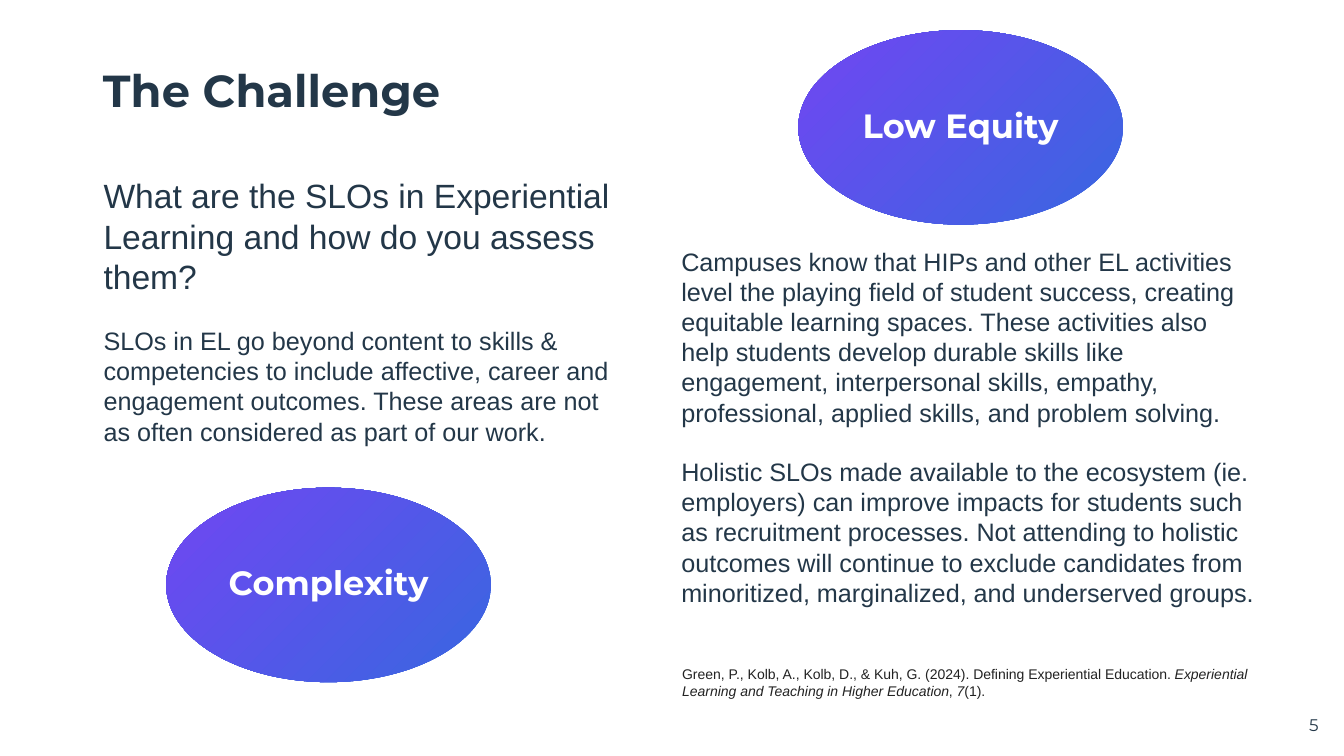
import pptx
import pptx.dml.color
import pptx.enum.shapes
import pptx.enum.text
import pptx.util

Cm, Pt = pptx.util.Cm, pptx.util.Pt
ALIGN = pptx.enum.text.PP_ALIGN
ANCHOR = pptx.enum.text.MSO_ANCHOR


def rgb(value):
    return pptx.dml.color.RGBColor.from_string(value)


class Deck:
    heading, body = "Montserrat", "Arial"
    ink, citation_ink, white = "233748", "222222", "FFFFFF"
    blue, purple = "3867E0", "7146F2"

    def __init__(self):
        self.prs = pptx.Presentation()
        self.prs.slide_width, self.prs.slide_height = Cm(33.87), Cm(19.05)
        self.s = self.prs.slides.add_slide(self.prs.slide_layouts[5])

    def font(self, p, name, size, color, bold=False):
        p.font.name, p.font.size, p.font.bold = name, Pt(size), bold
        p.font.color.rgb = rgb(color)

    def title(self, text, left, top, width, height):
        sp = self.s.shapes.title
        sp.left, sp.top, sp.width, sp.height = Cm(left), Cm(top), Cm(width), Cm(height)
        tf = sp.text_frame
        tf.text = text
        tf.auto_size = pptx.enum.text.MSO_AUTO_SIZE.NONE
        tf.vertical_anchor = ANCHOR.BOTTOM
        p = tf.paragraphs[0]
        p.alignment, p.line_spacing = ALIGN.LEFT, 0.9
        self.font(p, self.heading, 32, self.ink, True)

    def box(self, left, top, width, height):
        sp = self.s.shapes.add_textbox(Cm(left), Cm(top), Cm(width), Cm(height))
        sp.text_frame.word_wrap = True
        return sp.text_frame

    def passage(self, paragraphs, *place):
        tf = self.box(*place)
        for i, (text, size) in enumerate(paragraphs):
            p = tf.add_paragraph() if i else tf.paragraphs[0]
            p.text = text
            p.space_before = Pt(20.7 if i else 0)
            self.font(p, self.body, size, self.ink)

    def citation(self, runs, *place):
        p = self.box(*place).paragraphs[0]
        self.font(p, self.body, 10, self.citation_ink)
        for text, italic in runs:
            r = p.add_run()
            r.text, r.font.italic = text, italic

    def number(self, text, *place):
        tf = self.box(*place)
        tf.vertical_anchor = ANCHOR.MIDDLE
        p = tf.paragraphs[0]
        p.text, p.alignment = text, ALIGN.RIGHT
        self.font(p, self.heading, 12, self.ink)

    def ellipse(self, text, left, top):
        sp = self.s.shapes.add_shape(
            pptx.enum.shapes.MSO_SHAPE.OVAL, Cm(left), Cm(top), Cm(8.18), Cm(4.9))
        sp.shadow.inherit = False
        sp.line.fill.background()
        sp.fill.gradient()
        sp.fill.gradient_angle = 135
        for stop, color in zip(sp.fill.gradient_stops, (self.blue, self.purple)):
            stop.color.rgb = rgb(color)
        tf = sp.text_frame
        tf.margin_left = tf.margin_right = tf.margin_top = tf.margin_bottom = 0
        tf.vertical_anchor = ANCHOR.MIDDLE
        p = tf.paragraphs[0]
        p.text, p.alignment, p.line_spacing = text, ALIGN.CENTER, 0.9
        self.font(p, self.heading, 24, self.white, True)


def main():
    deck = Deck()
    deck.title("The Challenge", 2.34, 1.02, 29.21, 2.06)
    deck.number("5", 25.86, 17.75, 7.62, 1.02)
    deck.passage([
        ("What are the SLOs in Experiential Learning and how do you assess them?", 24),
        ("SLOs in EL go beyond content to skills & competencies to include affective, "
         "career and engagement outcomes. These areas are not as often considered as "
         "part of our work.", 18),
    ], 2.36, 4.29, 13.67, 7.19)
    deck.passage([
        ("Campuses know that HIPs and other EL activities level the playing field of "
         "student success, creating equitable learning spaces. These activities also "
         "help students develop durable skills like engagement, interpersonal skills, "
         "empathy, professional, applied skills, and problem solving.", 18),
        ("Holistic SLOs made available to the ecosystem (ie. employers) can improve "
         "impacts for students such as recruitment processes. Not attending to holistic "
         "outcomes will continue to exclude candidates from minoritized, marginalized, "
         "and underserved groups.", 18),
    ], 16.92, 6.07, 14.94, 10.26)
    deck.citation([
        ("Green, P., Kolb, A., Kolb, D., & Kuh, G. (2024). "
         "Defining Experiential Education. ", False),
        ("Experiential Learning and Teaching in Higher Education", True),
        (", ", False),
        ("7", True),
        ("(1).", False),
    ], 16.94, 16.64, 15.37, 1.12)
    deck.ellipse("Low Equity", 20.12, 0.76)
    deck.ellipse("Complexity", 4.19, 12.29)
    deck.prs.save("out.pptx")


if __name__ == "__main__":
    main()
